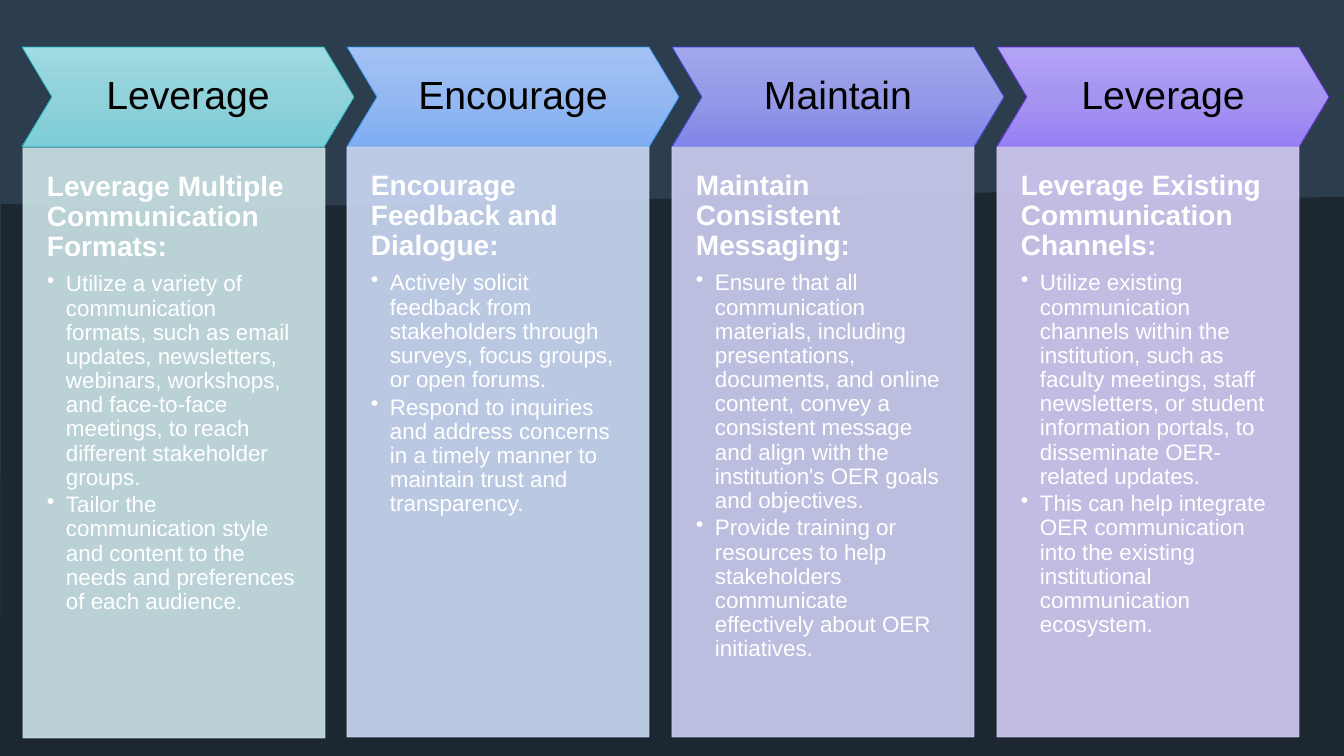
from copy import deepcopy

from lxml import etree
from pptx import Presentation
from pptx.dml.color import RGBColor
from pptx.enum.shapes import MSO_SHAPE
from pptx.enum.text import MSO_ANCHOR, PP_ALIGN
from pptx.oxml.ns import qn
from pptx.util import Emu, Pt

RECTANGLE, CHEVRON = MSO_SHAPE.RECTANGLE, MSO_SHAPE.CHEVRON
TOP, MIDDLE = MSO_ANCHOR.TOP, MSO_ANCHOR.MIDDLE
LEFT, CENTER = PP_ALIGN.LEFT, PP_ALIGN.CENTER

NIGHT = RGBColor(0x1C, 0x27, 0x32)
SLATE = RGBColor(0x2C, 0x3D, 0x4E)
BLACK = RGBColor(0x00, 0x00, 0x00)
WHITE = RGBColor(0xFF, 0xFF, 0xFF)
TEAL = RGBColor(0x14, 0xB1, 0xBC)
TEAL_BLEND = [RGBColor(0x9E, 0xDB, 0xE3), RGBColor(0x91, 0xD1, 0xD9), RGBColor(0x7C, 0xCE, 0xD8)]
TEAL_PALE = RGBColor(0xCC, 0xE4, 0xE7)
BLUE = RGBColor(0x29, 0x8C, 0xE7)
BLUE_BLEND = [RGBColor(0xA3, 0xC3, 0xF4), RGBColor(0x94, 0xB8, 0xF1), RGBColor(0x80, 0xAE, 0xF3)]
BLUE_PALE = RGBColor(0xCD, 0xDA, 0xF6)
INDIGO = RGBColor(0x2E, 0x40, 0xD9)
INDIGO_BLEND = [RGBColor(0xA3, 0xA7, 0xEB), RGBColor(0x95, 0x99, 0xE7), RGBColor(0x81, 0x86, 0xE8)]
INDIGO_PALE = RGBColor(0xCD, 0xCF, 0xF1)
VIOLET = RGBColor(0x65, 0x29, 0xE7)
VIOLET_BLEND = [RGBColor(0xB3, 0xA3, 0xF4), RGBColor(0xA6, 0x94, 0xF1), RGBColor(0x97, 0x80, 0xF3)]
VIOLET_PALE = RGBColor(0xD3, 0xCD, 0xF6)

WIDTH, HEIGHT = 1344, 756
FIRST_LEFT, COLUMN_STEP = 22, 325
HEADER_TOP, HEADER_WIDTH, HEADER_HEIGHT = 47, 332, 100
PANEL_WIDTH, PANEL_HEIGHT = 302, 590
HILLSIDE = [(1020, 192), (1186, 200), (1253, 199), (1334, 197), (WIDTH, 197), (WIDTH, HEIGHT),
            (0, HEIGHT), (1, 204), (8, 204), (141, 209), (274, 207), (357, 205), (440, 203)]

COLUMNS = [
    ("Leverage", "Leverage Multiple Communication Formats:",
     ["Utilize a variety of communication formats, such as email updates, newsletters, webinars, "
      "workshops, and face-to-face meetings, to reach different stakeholder groups.",
      "Tailor the communication style and content to the needs and preferences of each audience."],
     TEAL, TEAL_BLEND, TEAL_PALE, 1),
    ("Encourage", "Encourage Feedback and Dialogue:",
     ["Actively solicit feedback from stakeholders through surveys, focus groups, or open forums.",
      "Respond to inquiries and address concerns in a timely manner to maintain trust and transparency."],
     BLUE, BLUE_BLEND, BLUE_PALE, 0),
    ("Maintain", "Maintain Consistent Messaging:",
     ["Ensure that all communication materials, including presentations, documents, and online content, "
      "convey a consistent message and align with the institution's OER goals and objectives.",
      "Provide training or resources to help stakeholders communicate effectively about OER initiatives."],
     INDIGO, INDIGO_BLEND, INDIGO_PALE, 0),
    ("Leverage", "Leverage Existing Communication Channels:",
     ["Utilize existing communication channels within the institution, such as faculty meetings, staff "
      "newsletters, or student information portals, to disseminate OER-related updates.",
      "This can help integrate OER communication into the existing institutional communication ecosystem."],
     VIOLET, VIOLET_BLEND, VIOLET_PALE, 0),
]


def px(length):
    return Emu(round(length * 914400 / 100.8))


def apply(target, values):
    for name, value in values.items():
        setattr(target, name, value)


class Board:
    font = "Arial"
    outline = Pt(0.5)

    def __init__(self, slide):
        self.slide = slide

    def plain(self, shape, color):
        shape.shadow.inherit = False
        shape.fill.solid()
        shape.fill.fore_color.rgb = color
        shape.line.fill.background()
        return shape

    def block(self, kind, left, top, width, height, color):
        shape = self.slide.shapes.add_shape(kind, px(left), px(top), px(width), px(height))
        return self.plain(shape, color)

    def outlined(self, shape, color):
        shape.line.color.rgb = color
        shape.line.width = self.outline

    def polygon(self, points, color):
        builder = self.slide.shapes.build_freeform(*points[0], scale=914400 / 100.8)
        builder.add_line_segments(points[1:], close=True)
        return self.plain(builder.convert_to_shape(), color)

    def frame(self, shape, anchor, insets):
        sides = ("margin_left", "margin_top", "margin_right", "margin_bottom")
        values = dict(zip(sides, map(px, insets)), word_wrap=True, vertical_anchor=anchor)
        apply(shape.text_frame, values)
        return shape.text_frame

    def paragraph(self, paragraph, text, size, color, after, align=LEFT, bold=False, bullet=False):
        paragraph.text = text
        apply(paragraph, {"alignment": align, "line_spacing": 0.9, "space_after": Pt(after)})
        apply(paragraph.font, {"name": self.font, "size": Pt(size), "bold": bold})
        run_font = paragraph.runs[0].font
        apply(run_font, {"name": self.font, "size": Pt(size), "bold": bold})
        run_font.color.rgb = color
        if bullet:
            properties = paragraph._p.get_or_add_pPr()
            properties.set("marL", str(px(19)))
            properties.set("indent", str(-px(19)))
            mark = etree.Element(qn("a:buChar"), char="•")
            properties.find(qn("a:spcAft")).addnext(mark)

    def header(self, left, title, color, blend):
        chevron = self.block(CHEVRON, left, HEADER_TOP, HEADER_WIDTH, HEADER_HEIGHT, color)
        chevron.adjustments[0] = 0.3
        self.outlined(chevron, color)
        chevron.fill.gradient()
        chevron.fill.gradient_angle = 270
        first_stop = chevron._element.spPr.find(".//" + qn("a:gs"))
        first_stop.addnext(deepcopy(first_stop))
        for stop, shade, position in zip(chevron.fill.gradient_stops, blend, (0, 0.5, 1)):
            stop.color.rgb = shade
            stop.position = position
        frame = self.frame(chevron, MIDDLE, (12, 12, 12, 12))
        self.paragraph(frame.paragraphs[0], title, 28, BLACK, 10, CENTER)

    def panel(self, left, top, heading, points, color):
        panel = self.block(RECTANGLE, left, top, PANEL_WIDTH, PANEL_HEIGHT, color)
        self.outlined(panel, color)
        for tint in panel._element.spPr.iter(qn("a:srgbClr")):
            etree.SubElement(tint, qn("a:alpha"), val="90000")
        frame = self.frame(panel, TOP, (24, 24, 24, 47))
        self.paragraph(frame.paragraphs[0], heading, 20, WHITE, 7, bold=True)
        for point in points:
            self.paragraph(frame.add_paragraph(), point, 16, WHITE, 2.4, bullet=True)


def main():
    deck = Presentation()
    apply(deck, {"slide_width": px(WIDTH), "slide_height": px(HEIGHT)})
    slide = deck.slides.add_slide(deck.slide_layouts[6])
    slide.background.fill.solid()
    slide.background.fill.fore_color.rgb = NIGHT
    board = Board(slide)
    board.block(RECTANGLE, 0, 0, WIDTH, HEIGHT, SLATE)
    board.polygon(HILLSIDE, NIGHT)
    for index, (title, heading, points, color, blend, pale, nudge) in enumerate(COLUMNS):
        left = FIRST_LEFT + index * COLUMN_STEP
        board.header(left, title, color, blend)
        board.panel(left + nudge, HEADER_TOP + HEADER_HEIGHT + nudge, heading, points, pale)
    deck.save("out.pptx")


if __name__ == "__main__":
    main()
